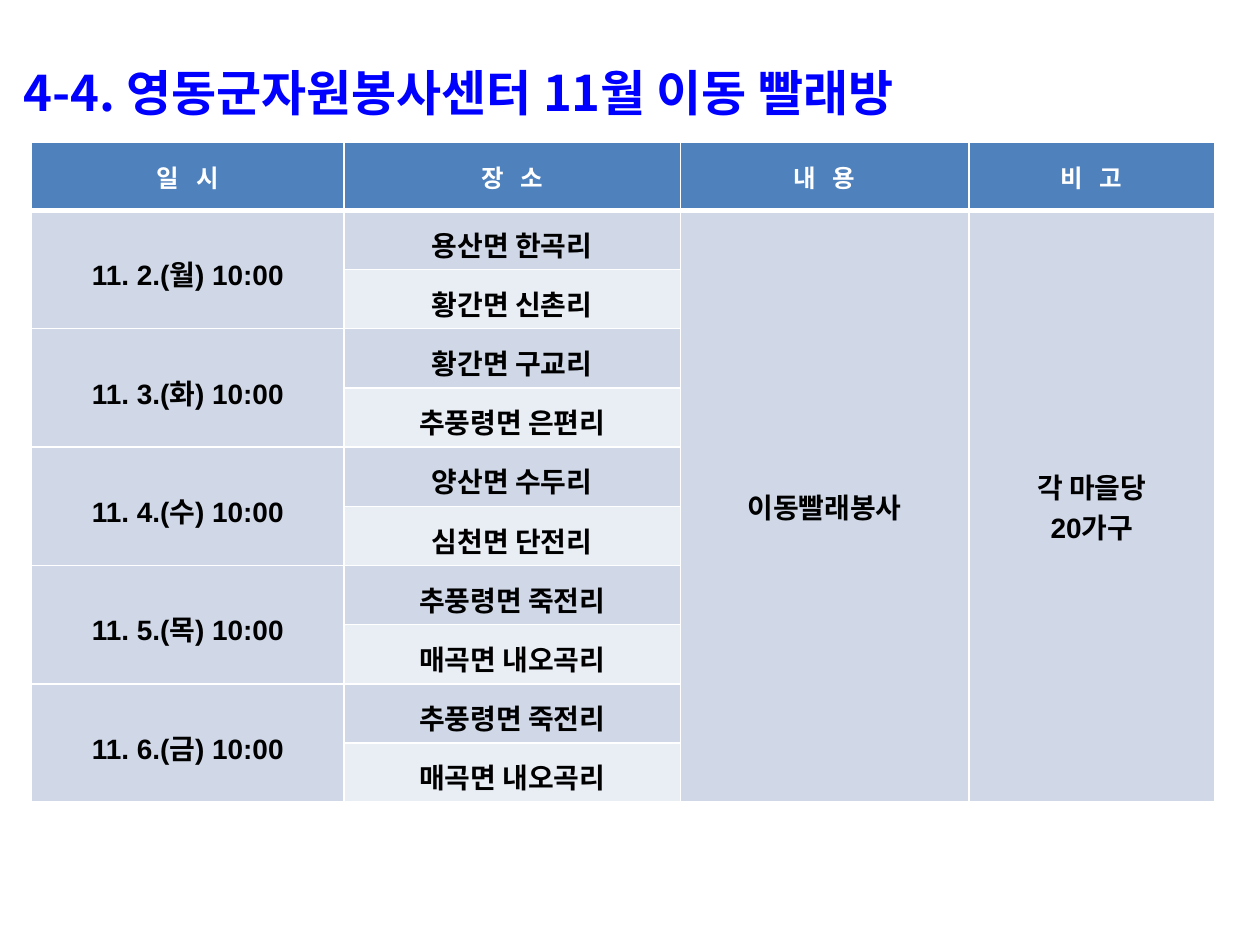
from lxml.etree import SubElement
from pptx import Presentation
from pptx.dml.color import RGBColor
from pptx.enum.text import MSO_ANCHOR, MSO_AUTO_SIZE, PP_ALIGN
from pptx.oxml import parse_xml
from pptx.oxml.ns import nsdecls, qn
from pptx.util import Inches, Pt

COLORS = {"title": "0000FF", "header": "4F81BD", "band": "D0D8E8",
          "light": "E9EDF4", "white": "FFFFFF", "text": "000000"}
HANGUL_FONT = "Noto Sans CJK KR"
HEADERS = ["일   시", "장   소", "내   용", "비   고"]
SCHEDULE = [
    ("11. 2.(월) 10:00", ["용산면 한곡리", "황간면 신촌리"]),
    ("11. 3.(화) 10:00", ["황간면 구교리", "추풍령면 은편리"]),
    ("11. 4.(수) 10:00", ["양산면 수두리", "심천면 단전리"]),
    ("11. 5.(목) 10:00", ["추풍령면 죽전리", "매곡면 내오곡리"]),
    ("11. 6.(금) 10:00", ["추풍령면 죽전리", "매곡면 내오곡리"]),
]
COLUMN_WIDTHS = [2.48, 2.67, 2.29, 1.95]
HEADER_HEIGHT, ROW_HEIGHT = 0.54, 0.47
ROW_COUNT = 1 + 2 * len(SCHEDULE)


def format_paragraph(paragraph, size, color, latin_font, alignment, line_spacing):
    paragraph.alignment = alignment
    paragraph.line_spacing = line_spacing
    for run in paragraph.runs:
        for name, value in {"size": Pt(size), "bold": True, "name": latin_font}.items():
            setattr(run.font, name, value)
        run.font.color.rgb = RGBColor.from_string(COLORS[color])
        SubElement(run.font._element, qn("a:ea")).set("typeface", HANGUL_FONT)


def fill_cell(cell, text, fill, size=16, color="text", line_spacing=1.0):
    cell.text = text
    cell.vertical_anchor = MSO_ANCHOR.MIDDLE
    for paragraph in cell.text_frame.paragraphs:
        format_paragraph(paragraph, size, color, "Arial", PP_ALIGN.CENTER, line_spacing)


    cell.fill.solid()
    cell.fill.fore_color.rgb = RGBColor.from_string(COLORS[fill])


presentation = Presentation()
presentation.slide_width = Inches(10)
presentation.slide_height = Inches(7.5)
slide = presentation.slides.add_slide(presentation.slide_layouts[5])

title = slide.shapes.title
for name, value in {"left": 0, "top": 0.21, "width": 10, "height": 0.69}.items():
    setattr(title, name, Inches(value))
title_frame = title.text_frame
title_frame.text = "4-4. 영동군자원봉사센터 11월 이동 빨래방"
frame_format = {"word_wrap": False, "auto_size": MSO_AUTO_SIZE.NONE,
                "vertical_anchor": MSO_ANCHOR.TOP, "margin_left": Inches(0.19)}
for name, value in frame_format.items():
    setattr(title_frame, name, value)
format_paragraph(title_frame.paragraphs[0], 28, "title", HANGUL_FONT, PP_ALIGN.LEFT, 1.5)

table = slide.shapes.add_table(
    ROW_COUNT, len(HEADERS), Inches(0.25), Inches(1.13), Inches(sum(COLUMN_WIDTHS)),
    Inches(HEADER_HEIGHT + ROW_HEIGHT * (ROW_COUNT - 1))).table
for column, width in zip(table.columns, COLUMN_WIDTHS):
    column.width = Inches(width)
for index, row in enumerate(table.rows):
    row.height = Inches(ROW_HEIGHT if index else HEADER_HEIGHT)

for column, header in enumerate(HEADERS):
    fill_cell(table.cell(0, column), header, "header", size=14, color="white")

for day, (date, places) in enumerate(SCHEDULE):
    first_row = 1 + 2 * day
    date_cell = table.cell(first_row, 0)
    date_cell.merge(table.cell(first_row + 1, 0))
    fill_cell(date_cell, date, "band", line_spacing=1.2)
    for offset, (place, fill) in enumerate(zip(places, ["band", "light"])):
        fill_cell(table.cell(first_row + offset, 1), place, fill, line_spacing=1.2)
    for row in (first_row, first_row + 1):
        for column in (0, 1):
            cell = table.cell(row, column)
            cell.margin_left = cell.margin_right = Inches(0.07)
            cell.margin_top = cell.margin_bottom = Inches(0.02)

for column, text in [(2, "이동빨래봉사"), (3, "각 마을당\n20가구")]:
    cell = table.cell(1, column)
    cell.merge(table.cell(ROW_COUNT - 1, column))
    fill_cell(cell, text, "band")

for row_index, row in enumerate(table.rows):
    widths = {"lnL": 1, "lnR": 1, "lnT": 3 if row_index == 1 else 1,
              "lnB": 3 if row_index == 0 else 1}
    for cell in row.cells:
        properties = cell._tc.get_or_add_tcPr()
        for position, (side, width) in enumerate(widths.items()):
            properties.insert(position, parse_xml(
                f'<a:{side} {nsdecls("a")} w="{Pt(width)}"><a:solidFill>'
                f'<a:srgbClr val="{COLORS["white"]}"/></a:solidFill></a:{side}>'))

presentation.save("out.pptx")
